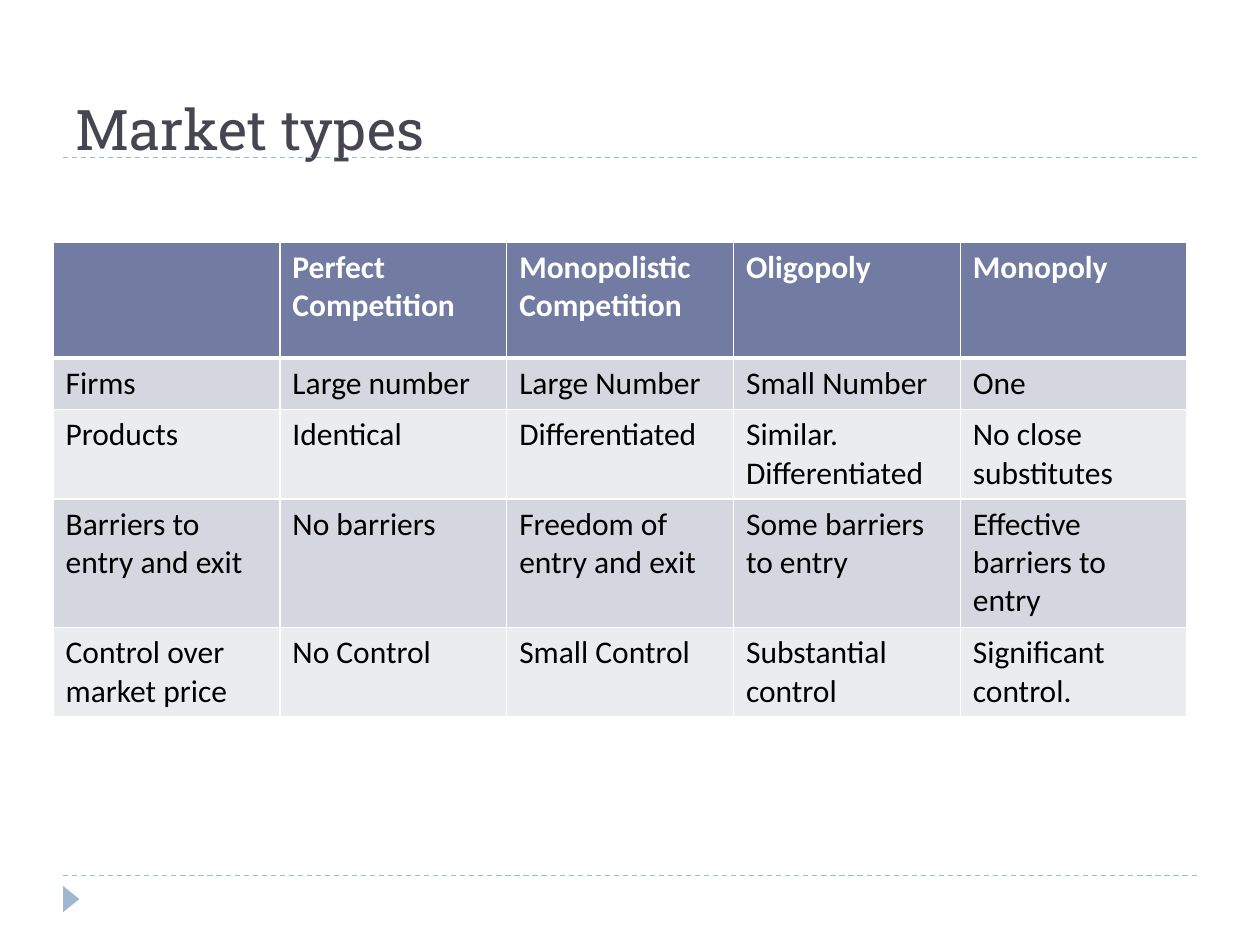
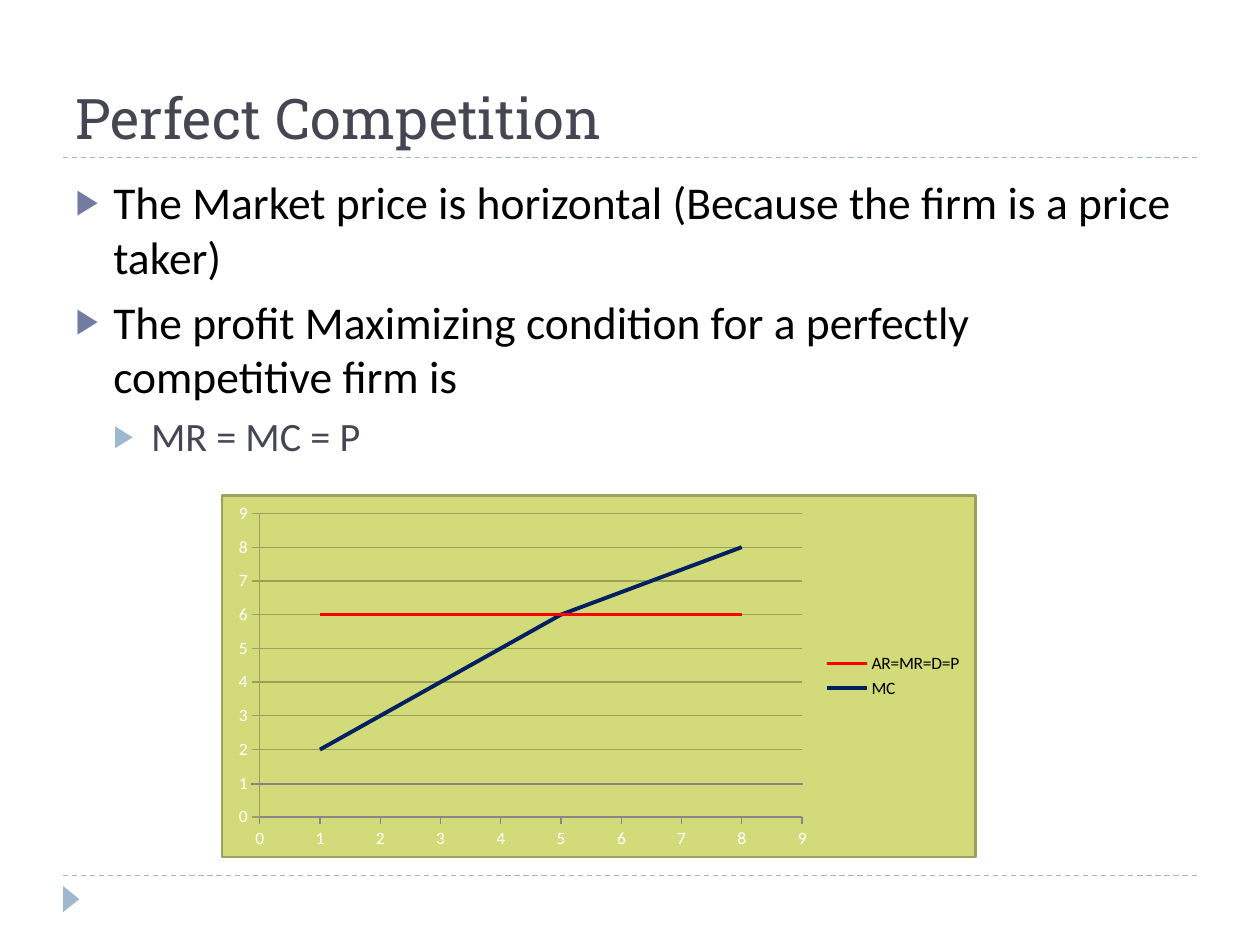
from dataclasses import dataclass

from pptx import Presentation
from pptx import util as u
from pptx.chart.data import XyChartData
from pptx.dml.color import RGBColor
from pptx.enum import chart as charts
from pptx.enum import dml, shapes, text
from pptx.oxml import parse_xml
from pptx.oxml.ns import nsdecls, qn


@dataclass(frozen=True)
class Theme:
    heading_font: str = "Roboto Slab"
    body_font: str = "Calibri"
    title_size: float = 32
    list_sizes: tuple = (26, 23)
    table_size: float = 18
    chart_size: float = 10
    ink: str = "000000"
    slate: str = "464653"
    indigo: str = "727CA3"
    mist: str = "9FB8CD"
    white: str = "FFFFFF"
    bands: tuple = ("D5D7E0", "EBECF0")
    chart_fill: str = "D2DA7A"
    olive: str = "9BA15A"
    grey: str = "878787"
    price_red: str = "FF0000"
    cost_navy: str = "002060"


THEME = Theme()
MARGIN = u.Cm(1.27)
CONTENT_WIDTH = u.Cm(22.86)
RULE_TOPS = (u.Cm(3.18), u.Cm(17.65))

MARKET_TABLE = (
    ("", "Perfect Competition", "Monopolistic Competition", "Oligopoly", "Monopoly"),
    ("Firms", "Large number", "Large Number", "Small Number", "One"),
    ("Products", "Identical", "Differentiated", "Similar. Differentiated",
     "No close substitutes"),
    ("Barriers to entry and exit", "No barriers", "Freedom of entry and exit",
     "Some barriers to entry", "Effective barriers to entry"),
    ("Control over market price", "No Control", "Small Control",
     "Substantial control", "Significant control."),
)
ROW_HEIGHTS = (2.34, 1.03, 1.8, 2.59, 1.8)

POINTS = (
    (0, "The Market price is horizontal (Because the firm is a price taker)"),
    (0, "The profit Maximizing condition for a perfectly competitive firm is"),
    (1, "MR = MC = P"),
)

OUTPUTS = (1, 5, 8)
CURVES = (
    ("AR=MR=D=P", (6, 6, 6), THEME.price_red, 1.5),
    ("MC", (2, 6, 8), THEME.cost_navy, 2.25),
)
AXIS_MAX = 9
# Plot area inside the chart, as shares of its box: left, top, width, height.
PLOT = (0.05, 0.05, 0.72, 0.84)


def rgb(value):
    return RGBColor.from_string(value)


def format_font(font, size, color, name=THEME.body_font, bold=False):
    font.name, font.size, font.bold = name, u.Pt(size), bold
    font.color.rgb = rgb(color)


def write(para, words, **style):
    """Add one run of text; style holds the arguments of format_font."""
    span = para.add_run()
    span.text = words
    format_font(span.font, **style)


def place(shape, left, top, width, height):
    shape.left, shape.top, shape.width, shape.height = left, top, width, height


def format_line(line, color, width):
    line.color.rgb, line.width = rgb(color), u.Pt(width)


def add_line(page, start, end, color, width, dash=None):
    line = page.shapes.add_connector(shapes.MSO_CONNECTOR.STRAIGHT, *start, *end)
    format_line(line.line, color, width)
    line.line.dash_style = dash
    line.element.spPr.append(parse_xml(f"<a:effectLst {nsdecls('a')}/>"))


def add_frame(page):
    """Draw the dashed rules and the corner arrow that every slide has."""
    for top in RULE_TOPS:
        add_line(page, (MARGIN, top), (MARGIN + CONTENT_WIDTH, top),
                 THEME.mist, 0.75, dml.MSO_LINE.DASH)
    arrow = page.shapes.add_shape(shapes.MSO_SHAPE.ISOSCELES_TRIANGLE,
                                  u.Cm(1.17), u.Cm(17.96), u.Cm(0.53), u.Cm(0.33))
    arrow.rotation = 90
    arrow.shadow.inherit = False
    arrow.fill.solid()
    arrow.fill.fore_color.rgb = rgb(THEME.mist)
    arrow.line.fill.background()


def add_page(deck, layout, title, title_top):
    page = deck.slides.add_slide(deck.slide_layouts[layout])
    add_frame(page)
    box = page.shapes.title
    place(box, MARGIN, title_top, CONTENT_WIDTH, u.Cm(2.74))
    box.text_frame.vertical_anchor = text.MSO_ANCHOR.BOTTOM
    box.text_frame.auto_size = text.MSO_AUTO_SIZE.NONE
    para = box.text_frame.paragraphs[0]
    para.alignment = text.PP_ALIGN.LEFT
    write(para, title, size=THEME.title_size, color=THEME.slate,
          name=THEME.heading_font)
    return page


def add_borders(cell, bottom):
    properties = cell._tc.get_or_add_tcPr()
    for side, points in (("L", 1), ("R", 1), ("T", 1), ("B", bottom)):
        properties.append(parse_xml(
            f'<a:ln{side} {nsdecls("a")} w="{u.Pt(points)}"><a:solidFill>'
            f'<a:srgbClr val="{THEME.white}"/></a:solidFill></a:ln{side}>'))


def add_market_table(page, left, top, width):
    columns = len(MARKET_TABLE[0])
    heights = [u.Cm(height) for height in ROW_HEIGHTS]
    table = page.shapes.add_table(len(MARKET_TABLE), columns, left, top,
                                  width, sum(heights)).table
    for column in table.columns:
        column.width = width // columns
    for index, (row, labels) in enumerate(zip(table.rows, MARKET_TABLE)):
        header = index == 0
        row.height = heights[index]
        for cell, label in zip(row.cells, labels):
            add_borders(cell, bottom=3 if header else 1)
            cell.fill.solid()
            cell.fill.fore_color.rgb = rgb(
                THEME.indigo if header else THEME.bands[(index - 1) % 2])
            if label:
                write(cell.text_frame.paragraphs[0], label,
                      size=THEME.table_size, bold=header,
                      color=THEME.white if header else THEME.ink)


def add_bullet(para, level, color):
    properties = para._p.get_or_add_pPr()
    indent = u.Cm(0.76)
    properties.set("marL", str(indent * (level + 1)))
    properties.set("indent", str(-indent))
    for tag, attribute in (
            (f'buClr {nsdecls("a")}><a:srgbClr val="{color}"/></a:buClr', ""),
            (f'buSzPct {nsdecls("a")}', 'val="76000"/'),
            (f'buChar {nsdecls("a")}', 'char="▶"/')):
        properties.append(parse_xml(f"<a:{tag} {attribute}>"))


def add_points(box, left, top, width, height):
    place(box, left, top, width, height)
    frame = box.text_frame
    frame.auto_size = text.MSO_AUTO_SIZE.NONE
    for index, (level, words) in enumerate(POINTS):
        para = frame.add_paragraph() if index else frame.paragraphs[0]
        para.level = level
        para.space_before = u.Pt(6 - level)
        add_bullet(para, level, (THEME.indigo, THEME.mist)[level])
        write(para, words, size=THEME.list_sizes[level],
              color=(THEME.ink, THEME.slate)[level])


def format_chart_area(chart):
    """Fill the chart area and fix the plot area inside it."""
    body = chart.element.find(qn("c:chart"))
    body.addnext(parse_xml(
        f'<c:spPr {nsdecls("c", "a")}><a:solidFill><a:srgbClr val="{THEME.chart_fill}"/>'
        f'</a:solidFill><a:ln w="{u.Pt(1.5)}"><a:solidFill>'
        f'<a:srgbClr val="{THEME.olive}"/></a:solidFill></a:ln></c:spPr>'))
    plot = body.find(qn("c:plotArea"))
    for layout in plot.findall(qn("c:layout")):
        plot.remove(layout)
    modes = '<c:xMode val="edge"/><c:yMode val="edge"/>'
    shares = "".join(f'<c:{side} val="{share}"/>' for side, share in zip("xywh", PLOT))
    plot.insert(0, parse_xml(
        f'<c:layout {nsdecls("c")}><c:manualLayout><c:layoutTarget val="inner"/>'
        f"{modes}{shares}</c:manualLayout></c:layout>"))


def format_axis(axis, color, grid):
    axis.minimum_scale, axis.maximum_scale, axis.major_unit = 0, AXIS_MAX, 1
    axis.major_tick_mark = charts.XL_TICK_MARK.OUTSIDE
    axis.minor_tick_mark = charts.XL_TICK_MARK.NONE
    axis.has_major_gridlines = grid
    format_line(axis.format.line, color, 0.75)
    if grid:
        format_line(axis.major_gridlines.format.line, THEME.olive, 0.75)


def add_curves(page, left, top, width, height):
    data = XyChartData()
    for name, prices, _, _ in CURVES:
        series = data.add_series(name)
        for output, price in zip(OUTPUTS, prices):
            series.add_data_point(output, price)
    chart = page.shapes.add_chart(
        charts.XL_CHART_TYPE.XY_SCATTER_SMOOTH_NO_MARKERS,
        left, top, width, height, data).chart
    chart.has_title = False
    format_font(chart.font, THEME.chart_size, THEME.white)
    format_chart_area(chart)
    format_axis(chart.category_axis, THEME.grey, grid=False)
    format_axis(chart.value_axis, THEME.olive, grid=True)
    chart.has_legend = True
    chart.legend.position = charts.XL_LEGEND_POSITION.RIGHT
    chart.legend.include_in_layout = False
    format_font(chart.legend.font, THEME.chart_size, THEME.ink)
    chart.plots[0].vary_by_categories = False
    for series, (_, _, color, weight) in zip(chart.plots[0].series, CURVES):
        series.smooth = True
        series.marker.style = charts.XL_MARKER_STYLE.NONE
        format_line(series.format.line, color, weight)

    plot_left, plot_top, plot_width, plot_height = PLOT
    level_one = top + int(height * (plot_top + plot_height * (1 - 1 / AXIS_MAX)))
    start = left + int(width * plot_left)
    add_line(page, (start - u.Cm(0.15), level_one),
             (start + int(width * plot_width), level_one), THEME.grey, 1)


def add_market_types(deck):
    page = add_page(deck, 5, "Market types", u.Cm(0.64))
    add_market_table(page, u.Cm(1.07), u.Cm(4.88), CONTENT_WIDTH)


def add_perfect_competition(deck):
    page = add_page(deck, 1, "Perfect Competition", u.Cm(0.43))
    add_points(page.placeholders[1], MARGIN, u.Cm(3.38), CONTENT_WIDTH, u.Cm(7.42))
    add_curves(page, u.Cm(4.45), u.Cm(9.96), u.Cm(15.24), u.Cm(7.34))


def main():
    deck = Presentation()
    deck.slide_width, deck.slide_height = u.Cm(25.4), u.Cm(19.05)
    add_market_types(deck)
    add_perfect_competition(deck)
    deck.save("out.pptx")


if __name__ == "__main__":
    main()
